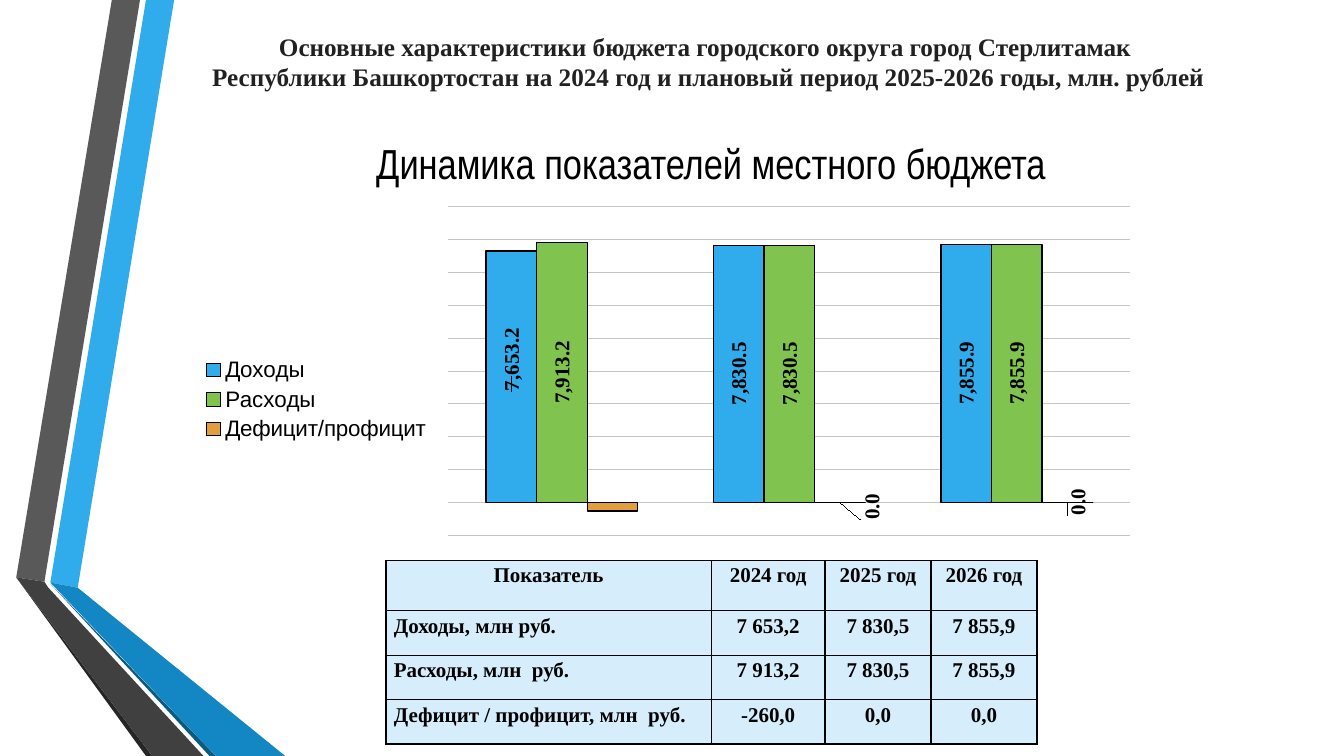
from lxml import etree
from pptx import Presentation
from pptx.chart.data import CategoryChartData
from pptx.dml.color import RGBColor
from pptx.enum.chart import XL_CHART_TYPE, XL_LABEL_POSITION, XL_LEGEND_POSITION
from pptx.enum.text import MSO_ANCHOR, PP_ALIGN
from pptx.oxml import parse_xml
from pptx.oxml.ns import nsdecls, qn
from pptx.util import Cm, Pt

CENTER = PP_ALIGN.CENTER
LEFT = PP_ALIGN.LEFT
LABEL_CENTER = XL_LABEL_POSITION.CENTER
SERIF = "Times New Roman"


def color(value):
    return RGBColor.from_string(value)


def set_font(font, name, size, value, bold=False):
    font.name = name
    font.size = Pt(size)
    font.color.rgb = color(value)
    font.bold = bold


presentation = Presentation()
presentation.slide_width = Cm(33.88)
presentation.slide_height = Cm(19.05)
slide = presentation.slides.add_slide(presentation.slide_layouts[6])

ribbons = [
    ("30ACEC", [(1.27, 14.68), (1.96, 14.81), (4.39, 0), (3.68, 0)]),
    ("595959", [(3.53, 0), (2.82, 0), (0.41, 14.55), (1.12, 14.66)]),
    ("262626", [(0.41, 14.55), (3.68, 19.05), (3.84, 19.05)]),
    ("0C5A82", [(1.27, 14.71), (5.28, 19.05), (5.44, 19.05)]),
    ("1287C3", [(1.27, 14.68), (5.44, 19.05), (7.19, 19.05), (1.96, 14.81)]),
    ("404040", [(5.13, 19.05), (1.22, 14.81), (1.12, 14.66), (0.41, 14.55), (3.84, 19.05)]),
]
for fill, corners in ribbons:
    points = [(Cm(x), Cm(y)) for x, y in corners]
    builder = slide.shapes.build_freeform(*points[0])
    builder.add_line_segments(points[1:], close=True)
    ribbon = builder.convert_to_shape()
    ribbon.shadow.inherit = False
    ribbon.fill.solid()
    ribbon.fill.fore_color.rgb = color(fill)
    ribbon.line.fill.background()

headings = [
    ("Основные характеристики бюджета городского округа город Стерлитамак \v"
     "Республики Башкортостан на 2024 год и плановый период 2025-2026 годы, млн. рублей",
     (3.53, 0.76, 28.65, 1.57), SERIF, 18, "212121", True),
    ("Динамика показателей местного бюджета",
     (7.82, 3.33, 20.22, 1.55), "Arial Narrow", 30, "000000", False),
]
for text, box, name, size, value, bold in headings:
    shape = slide.shapes.add_textbox(*[Cm(length) for length in box])
    shape.text_frame.word_wrap = True
    shape.text_frame.vertical_anchor = MSO_ANCHOR.MIDDLE
    shape.text_frame.text = text
    paragraph = shape.text_frame.paragraphs[0]
    paragraph.alignment = CENTER
    set_font(paragraph.font, name, size, value, bold)

series_rows = [
    ("Доходы", (7653.2, 7830.5, 7855.9), "30ACEC"),
    ("Расходы", (7913.2, 7830.5, 7855.9), "80C34F"),
    ("Дефицит/профицит", (-260, 0, 0), "E29D3E"),
]
chart_data = CategoryChartData(number_format="#,##0.0")
chart_data.categories = ["1", "2", "3"]
for name, values, fill in series_rows:
    chart_data.add_series(name, values)
chart = slide.shapes.add_chart(
    XL_CHART_TYPE.COLUMN_CLUSTERED, Cm(3.12), Cm(4.88), Cm(27), Cm(10.8), chart_data).chart
chart.has_title = False
set_font(chart.font, "Cabin", 18, "000000")
chart.category_axis.visible = False
value_axis = chart.value_axis
value_axis.visible = False
value_axis.minimum_scale = -1000
value_axis.maximum_scale = 9000
value_axis.major_unit = 1000
value_axis.has_major_gridlines = True
value_axis.major_gridlines.format.line.color.rgb = color("C5C5C5")
value_axis.major_gridlines.format.line.width = Pt(0.75)
chart.has_legend = True
chart.legend.position = XL_LEGEND_POSITION.LEFT
chart.legend.include_in_layout = False
set_font(chart.legend.font, "Arial", 16, "000000")

plot = chart.plots[0]
plot.gap_width = 150
plot.overlap = 0
plot.vary_by_categories = False
for series, (name, values, fill) in zip(plot.series, series_rows):
    series.invert_if_negative = False
    series.format.fill.solid()
    series.format.fill.fore_color.rgb = color(fill)
    series.format.line.color.rgb = color("000000")
    series.format.line.width = Pt(1)
    labels = series.data_labels
    labels.show_value = True
    labels.position = LABEL_CENTER
    labels.number_format = "#,##0.0"
    labels.number_format_is_linked = False
    set_font(labels.font, SERIF, 15, "000000", True)

moved_labels = [(0, 0, 0, -0.04), (2, 1, 0.03, 0.01), (2, 2, 0.01, 0)]
for series_index, point_index, x, y in moved_labels:
    series = plot.series[series_index]
    label = series.points[point_index].data_label
    label.position = LABEL_CENTER
    set_font(label.font, SERIF, 15, "000000", True)
    element = series._element.xpath(f".//c:dLbl[c:idx/@val='{point_index}']")[0]
    element.insert(1, parse_xml(
        f'<c:layout {nsdecls("c")}><c:manualLayout><c:x val="{x}"/><c:y val="{y}"/>'
        '</c:manualLayout></c:layout>'))

deficit_labels = plot.series[2]._element.find(qn("c:dLbls"))
deficit_labels.insert(0, parse_xml(
    f'<c:dLbl {nsdecls("c")}><c:idx val="0"/><c:delete val="1"/></c:dLbl>'))
for body in chart._chartSpace.xpath(".//c:dLbls//a:bodyPr"):
    body.set("rot", "-5400000")
    body.set("vert", "horz")

layouts = [
    (chart._chartSpace.xpath(".//c:plotArea")[0], 0, "inner", (0.303, 0.031, 0.637, 0.766)),
    (chart.legend._element, 1, None, (0.07, 0.37, 0.22, 0.22)),
]
for parent, position, target, box in layouts:
    for previous in parent.findall(qn("c:layout")):
        parent.remove(previous)
    layout = etree.Element(qn("c:layout"))
    manual = etree.SubElement(layout, qn("c:manualLayout"))
    entries = [("layoutTarget", target)] if target else []
    entries += [("xMode", "edge"), ("yMode", "edge"), *zip("xywh", box)]
    for tag, value in entries:
        etree.SubElement(manual, qn(f"c:{tag}")).set("val", str(value))
    parent.insert(position, layout)

table_rows = [
    ("Показатель", "2024 год", "2025 год", "2026 год"),
    ("Доходы, млн руб.", "7 653,2", "7 830,5", "7 855,9"),
    ("Расходы, млн  руб.", "7 913,2", "7 830,5", "7 855,9"),
    ("Дефицит / профицит, млн  руб.", "-260,0", "0,0", "0,0"),
]
column_widths = [8.2, 2.87, 2.67, 2.67]
row_heights = [1.27, 1.12, 1.12, 1.12]
table = slide.shapes.add_table(
    4, 4, Cm(9.73), Cm(14.12), Cm(sum(column_widths)), Cm(sum(row_heights))).table
for column, width in zip(table.columns, column_widths):
    column.width = Cm(width)
for row_index, (row, height) in enumerate(zip(table_rows, row_heights)):
    table.rows[row_index].height = Cm(height)
    for column_index, text in enumerate(row):
        cell = table.cell(row_index, column_index)
        cell.text = text
        cell.margin_left = cell.margin_right = Cm(0.2)
        cell.margin_top = cell.margin_bottom = Cm(0.1)
        paragraph = cell.text_frame.paragraphs[0]
        paragraph.alignment = LEFT if row_index and not column_index else CENTER
        set_font(paragraph.font, SERIF, 15, "000000", True)
        for side in "LRTB":
            cell._tc.get_or_add_tcPr().append(parse_xml(
                f'<a:ln{side} {nsdecls("a")} w="12700"><a:solidFill>'
                f'<a:srgbClr val="000000"/></a:solidFill></a:ln{side}>'))
        cell.fill.solid()
        cell.fill.fore_color.rgb = color("D6EEFB")

presentation.save("out.pptx")
